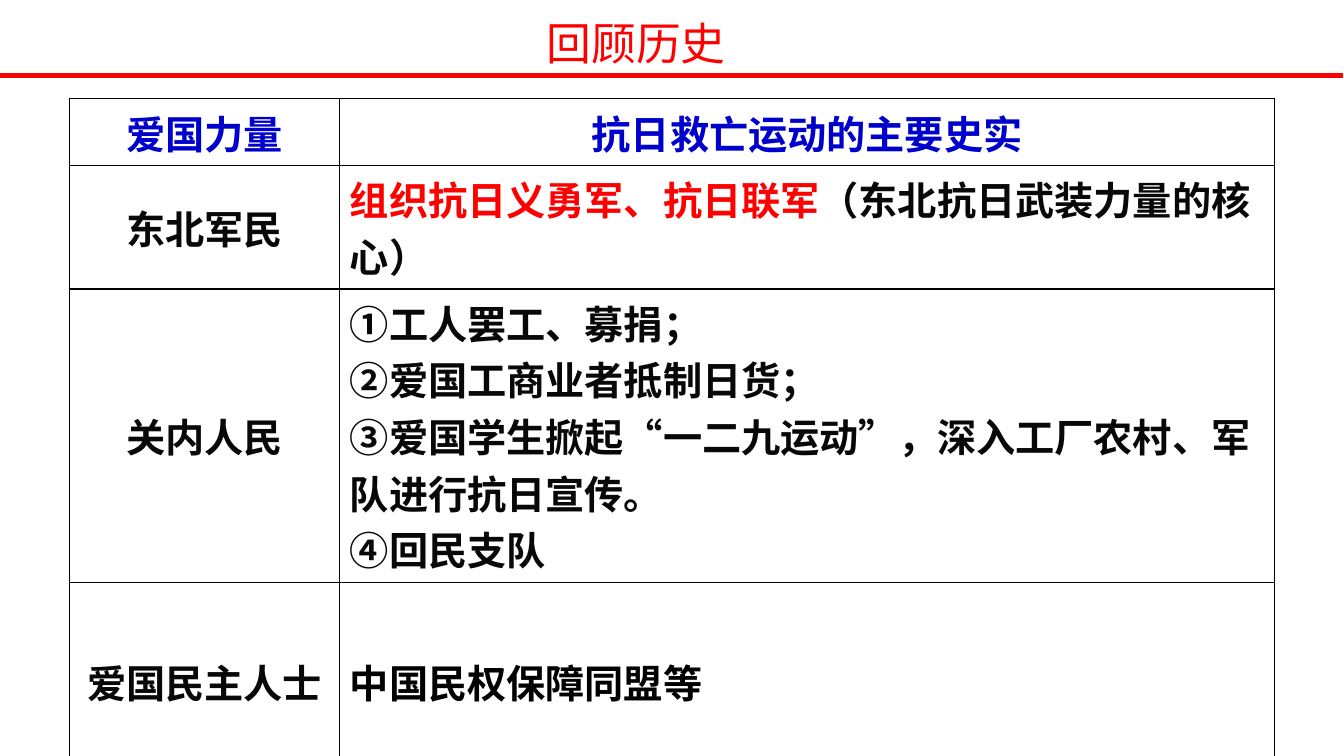
from dataclasses import dataclass

from lxml.etree import SubElement
from pptx import Presentation
from pptx.dml.color import RGBColor
from pptx.enum.shapes import MSO_CONNECTOR
from pptx.enum.text import MSO_ANCHOR, MSO_AUTO_SIZE, PP_ALIGN
from pptx.oxml.ns import qn
from pptx.util import Inches, Pt


@dataclass(frozen=True)
class Theme:
    font: str = "Noto Sans CJK SC"
    red: str = "FF0000"
    blue: str = "0000CC"
    ink: str = "080808"
    black: str = "000000"
    title_size: int = 32
    table_size: int = 28
    border: float = 1
    rule: float = 3


class SlideBuilder:
    def __init__(self, slide, theme):
        self.slide = slide
        self.theme = theme

    def add_run(self, para, text, size, color, bold=False):
        span = para.add_run()
        span.text = text
        span.font.name = self.theme.font
        span.font.size = Pt(size)
        span.font.bold = bold
        span.font.color.rgb = RGBColor.from_string(color)
        properties = span.font._element
        properties.set("lang", "zh-CN")
        SubElement(properties, qn("a:ea"), typeface=self.theme.font)

    def title(self, text, left, top, width, height):
        box = self.slide.shapes.title
        box.left, box.top = Inches(left), Inches(top)
        box.width, box.height = Inches(width), Inches(height)
        frame = box.text_frame
        frame.auto_size = MSO_AUTO_SIZE.NONE
        frame.vertical_anchor = MSO_ANCHOR.TOP
        para = frame.paragraphs[0]
        para.alignment = PP_ALIGN.LEFT
        self.add_run(para, text, self.theme.title_size, self.theme.red)

    def rule(self, left, right, y):
        line = self.slide.shapes.add_connector(
            MSO_CONNECTOR.STRAIGHT, Inches(left), Inches(y), Inches(right), Inches(y))
        line.line.color.rgb = RGBColor.from_string(self.theme.red)
        line.line.width = Pt(self.theme.rule)
        SubElement(line._element.spPr, qn("a:effectLst"))

    def table(self, left, top, widths, heights, rows):
        table = self.slide.shapes.add_table(
            len(heights), len(widths), Inches(left), Inches(top),
            Inches(sum(widths)), Inches(sum(heights))).table
        table.first_row = table.horz_banding = False
        for column, width in zip(table.columns, widths):
            column.width = Inches(width)
        for row, height in zip(table.rows, heights):
            row.height = Inches(height)
        for r, row in enumerate(rows):
            for c, paragraphs in enumerate(row):
                centered = r == 0 or c == 0
                self.fill_cell(table.cell(r, c), paragraphs, centered)
        return table

    def fill_cell(self, cell, paragraphs, centered):
        cell.vertical_anchor = MSO_ANCHOR.MIDDLE
        self.border(cell)
        cell.fill.background()
        frame = cell.text_frame
        for index, runs in enumerate(paragraphs):
            para = frame.add_paragraph() if index else frame.paragraphs[0]
            para.alignment = PP_ALIGN.CENTER if centered else PP_ALIGN.LEFT
            for text, color in runs:
                self.add_run(para, text, self.theme.table_size, color, bold=True)

    def border(self, cell):
        properties = cell._tc.get_or_add_tcPr()
        for side in ("lnL", "lnR", "lnT", "lnB"):
            edge = SubElement(properties, qn(f"a:{side}"), w=str(Pt(self.theme.border)))
            fill = SubElement(edge, qn("a:solidFill"))
            SubElement(fill, qn("a:srgbClr"), val=self.theme.black)


def main():
    theme = Theme()
    deck = Presentation()
    deck.slide_width, deck.slide_height = Inches(13.33), Inches(7.5)
    page = SlideBuilder(deck.slides.add_slide(deck.slide_layouts[5]), theme)

    # Patriotic forces and what they did: cells hold paragraphs of (text, colour) runs
    def plain(*lines, color=theme.ink):
        return [[(line, color)] for line in lines]

    rows = [
        [plain("爱国力量", color=theme.blue),
         plain("抗日救亡运动的主要史实", color=theme.blue)],
        [plain("东北军民"),
         [[("组织抗日义勇军、抗日联军", theme.red),
           ("（东北抗日武装力量的核心）", theme.ink)]]],
        [plain("关内人民"),
         plain("①工人罢工、募捐；",
               "②爱国工商业者抵制日货；",
               "③爱国学生掀起“一二九运动”，深入工厂农村、军队进行抗日宣传。",
               "④回民支队")],
        [plain("爱国民主人士"),
         plain("中国民权保障同盟等", color=theme.black)],
    ]
    table = page.table(0.69, 0.98, [2.68, 9.27], [0.52, 1, 2.43, 1.97], rows)
    closing = table.cell(3, 1).text_frame.paragraphs[0]
    closing.space_before = Pt(0.2 * theme.table_size)

    # Heading and the rule below it
    page.title("回顾历史", 5.32, 0.11, 5.89, 0.64)
    page.rule(-0.02, 13.32, 0.75)

    deck.save("out.pptx")


if __name__ == "__main__":
    main()
